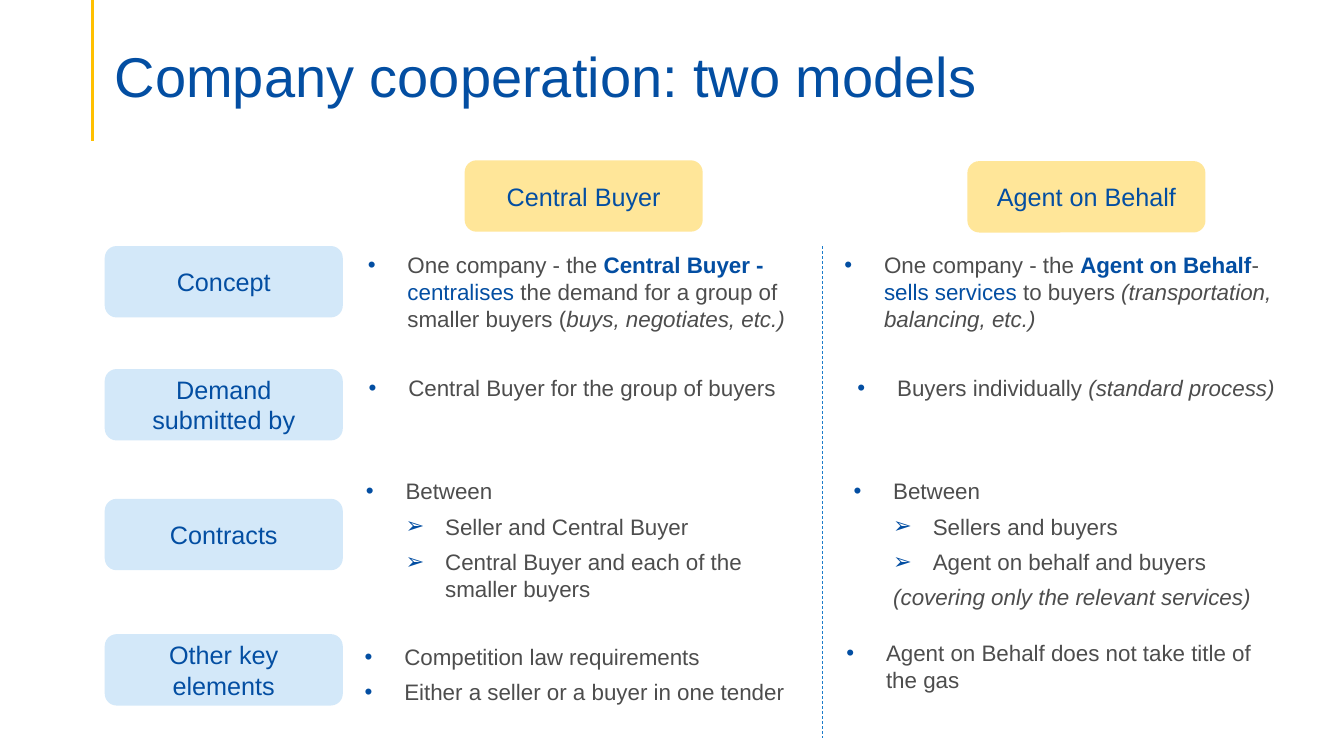
"""Build the slide that compares two models of company cooperation."""
from lxml import etree
from pptx import Presentation
from pptx.dml.color import RGBColor
from pptx.enum.dml import MSO_LINE
from pptx.enum.shapes import MSO_CONNECTOR, MSO_SHAPE
from pptx.enum.text import MSO_ANCHOR, MSO_AUTO_SIZE, PP_ALIGN
from pptx.oxml.ns import qn
from pptx.util import Cm, Pt

STRAIGHT, ROUND = MSO_CONNECTOR.STRAIGHT, MSO_SHAPE.ROUNDED_RECTANGLE
DASH = MSO_LINE.DASH
MIDDLE, BOTTOM = MSO_ANCHOR.MIDDLE, MSO_ANCHOR.BOTTOM
FIT, FIXED = MSO_AUTO_SIZE.SHAPE_TO_FIT_TEXT, MSO_AUTO_SIZE.NONE
LEFT, CENTER = PP_ALIGN.LEFT, PP_ALIGN.CENTER

BLUE, GRAY, PALE, SAND = "034EA2", "4D4D4D", "D3E8F9", "FFE699"
TITLE = "Company cooperation: two models"
HEADS = [("Central Buyer", 11.71, 4.04), ("Agent on Behalf", 24.38, 4.06)]
ROWS = [("Concept", 6.2), ("Demand submitted by", 9.3),
        ("Contracts", 12.57), ("Other key elements", 15.98)]
RULES = [(2.34, 0, 3.56, "FFC000", 2.25, None),
         (20.73, 6.2, 18.59, "1C7CCA", 0.5, DASH)]

STYLES = {
    "plain": (GRAY, {}),
    "blue": (BLUE, {}),
    "bold": (BLUE, {"bold": True}),
    "slant": (GRAY, {"italic": True}),
}
KINDS = {
    "dot": (0, 1, -1, "•"),
    "top": (1, 1, -1, "•"),
    "sub": (1, 2, -1, "➢"),
    "note": (2, 1, 0, None),
}
LISTS = [
    (9.02, 6.2, 11.38, 2.31, [
        ("dot", [("One company - the ", "plain"), ("Central Buyer - ", "bold"),
                 ("centralises", "blue"),
                 (" the demand for a group of smaller buyers (", "plain"),
                 ("buys, negotiates, etc.)", "slant")])]),
    (21.03, 6.2, 11.68, 3, [
        ("dot", [("One company - the ", "plain"), ("Agent on Behalf", "bold"),
                 ("- ", "plain"), ("sells services ", "blue"),
                 ("to buyers ", "plain"),
                 ("(transportation, balancing, etc.)", "slant")])]),
    (9.04, 9.3, 11.38, 0.94, [
        ("dot", [("Central Buyer for the group of buyers", "plain")])]),
    (21.36, 9.3, 11.38, 0.94, [
        ("dot", [("Buyers individually ", "plain"),
                 ("(standard process)", "slant")])]),
    (8.97, 11.91, 11.38, 3.43, [
        ("top", [("Between", "plain")]),
        ("sub", [("Seller and Central Buyer", "plain")]),
        ("sub", [("Central Buyer and each of the smaller buyers", "plain")])]),
    (21.26, 11.91, 11.38, 3.63, [
        ("top", [("Between", "plain")]),
        ("sub", [("Sellers and buyers", "plain")]),
        ("sub", [("Agent on behalf and buyers", "plain")]),
        ("note", [("(covering only the relevant services)", "slant")])]),
    (8.94, 16.08, 11.38, 1.83, [
        ("dot", [("Competition law requirements", "plain")]),
        ("dot", [("Either a seller or a buyer in one tender", "plain")])]),
    (21.08, 15.98, 11.38, 1.63, [
        ("dot", [("Agent on Behalf does not take title of the gas", "plain")])]),
]


def color(code):
    return RGBColor.from_string(code)


def apply(target, values):
    for name, value in values.items():
        setattr(target, name, value)


def write(para, text, size, code, extra):
    run = para.add_run()
    run.text = text
    apply(run.font, {"name": "Arial", "size": Pt(size), **extra})
    run.font.color.rgb = color(code)


def bullet(para, left, hang, mark):
    props = para._p.get_or_add_pPr()
    props.set("marL", str(Cm(left)))
    props.set("indent", str(Cm(hang)))
    if mark is None:
        etree.SubElement(props, qn("a:buNone"))
        return
    tint = etree.SubElement(props, qn("a:buClr"))
    etree.SubElement(tint, qn("a:srgbClr"), val=BLUE)
    etree.SubElement(props, qn("a:buFont"), typeface="Arial")
    etree.SubElement(props, qn("a:buChar"), char=mark)


def rule(slide, x, top, end, code, width, dash):
    line = slide.shapes.add_connector(STRAIGHT, Cm(x), Cm(top), Cm(x), Cm(end))
    line.line.color.rgb = color(code)
    apply(line.line, {"width": Pt(width), "dash_style": dash})
    etree.SubElement(line._element.spPr, qn("a:effectLst"))


def label(slide, text, x, y, fill):
    box = slide.shapes.add_shape(ROUND, Cm(x), Cm(y), Cm(6), Cm(1.8))
    box.shadow.inherit = False
    box.fill.solid()
    box.fill.fore_color.rgb = color(fill)
    box.line.fill.background()
    apply(box.text_frame, {"word_wrap": True, "vertical_anchor": MIDDLE})
    para = box.text_frame.paragraphs[0]
    para.alignment = CENTER
    write(para, text, 18, BLUE, {})


def points(slide, x, y, width, height, items):
    box = slide.shapes.add_textbox(Cm(x), Cm(y), Cm(width), Cm(height))
    frame = box.text_frame
    apply(frame, {"word_wrap": True, "auto_size": FIT})
    for i, (kind, runs) in enumerate(items):
        para = frame.add_paragraph() if i else frame.paragraphs[0]
        level, left, hang, mark = KINDS[kind]
        apply(para, {"level": level, "space_before": Pt(6)})
        bullet(para, left, hang, mark)
        for text, style in runs:
            code, extra = STYLES[style]
            write(para, text, 16, code, extra)


def head(slide):
    title = slide.shapes.title
    apply(title, {"left": Cm(2.64), "top": Cm(0.58),
                  "width": Cm(29.21), "height": Cm(2.18)})
    apply(title.text_frame, {"vertical_anchor": BOTTOM, "auto_size": FIXED,
                             "word_wrap": True, "margin_bottom": 0})
    para = title.text_frame.paragraphs[0]
    apply(para, {"alignment": LEFT, "line_spacing": 0.9})
    write(para, TITLE, 40, BLUE, {})


def main():
    deck = Presentation()
    apply(deck, {"slide_width": Cm(33.87), "slide_height": Cm(19.05)})
    slide = deck.slides.add_slide(deck.slide_layouts[5])
    head(slide)
    for spec_row in RULES:
        rule(slide, *spec_row)
    for text, y in ROWS:
        label(slide, text, 2.64, y, PALE)
    for text, x, y in HEADS:
        label(slide, text, x, y, SAND)
    for entry in LISTS:
        points(slide, *entry)
    deck.save("out.pptx")


if __name__ == "__main__":
    main()
